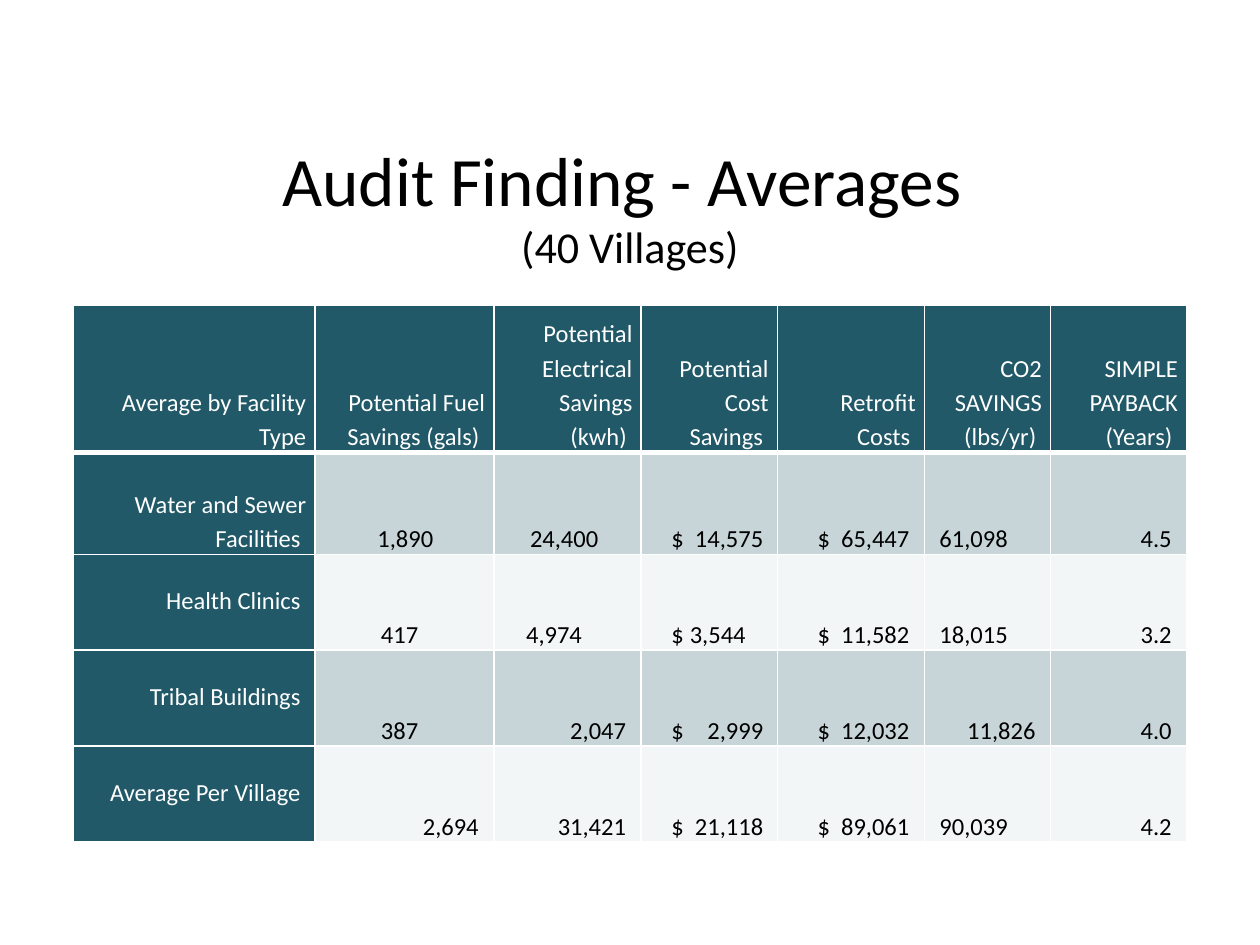
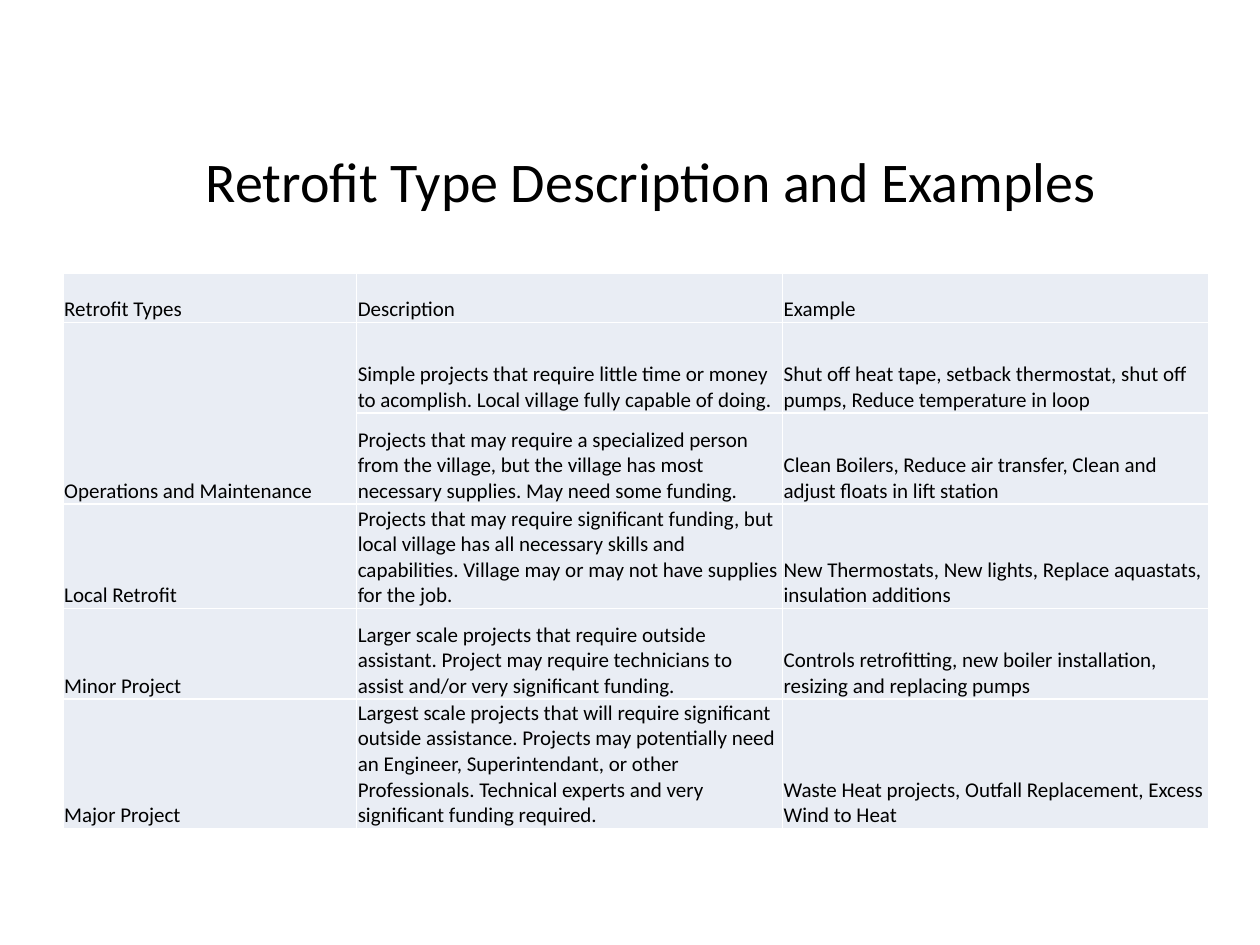
from dataclasses import dataclass

from lxml.etree import SubElement
from pptx import Presentation
from pptx.dml.color import RGBColor
from pptx.enum.text import MSO_ANCHOR as Anchor, MSO_AUTO_SIZE as AutoSize, PP_ALIGN as Align
from pptx.oxml.ns import qn
from pptx.util import Inches, Pt


@dataclass(frozen=True)
class Theme:
    font: str = "Calibri"
    black: str = "000000"
    white: str = "FFFFFF"
    teal: str = "215968"
    pale: str = "E9EDF4"
    title: float = 39.6
    subtitle: float = 25.2
    long_title: float = 32
    audit: float = 14
    retrofit: float = 12


THEME = Theme()


@dataclass(frozen=True)
class Box:
    left: float
    top: float
    width: float
    height: float

    def lengths(self) -> list:
        return [Inches(v) for v in (self.left, self.top, self.width, self.height)]


@dataclass(frozen=True)
class Entry:
    """Text of a table cell and its inner margins in inches."""
    text: str
    left: float = 0.07
    right: float = 0.07
    top: float = 0
    bottom: float = 0
    tab: float = 0


@dataclass(frozen=True)
class CellStyle:
    fill: str
    color: str
    size: float
    align: Align = Align.LEFT
    spacing: float = 1.0
    opacity: int = 100
    bottom_line: float = 1


# Text
def write(frame, text: str, *, size: float, color: str = THEME.black,
          align: Align = Align.LEFT, spacing: float = 1.0, tab: float = 0) -> None:
    """Fill a text frame, one paragraph for each line of text."""
    frame.word_wrap = True
    for index, line in enumerate(text.split("\n")):
        paragraph = frame.paragraphs[0] if index == 0 else frame.add_paragraph()
        paragraph.alignment = align
        paragraph.line_spacing = spacing
        if tab:
            stops = SubElement(paragraph._p.get_or_add_pPr(), qn("a:tabLst"))
            SubElement(stops, qn("a:tab"), pos=str(Inches(tab)), algn="r")
        add_run(paragraph, line, size, color)


def add_run(paragraph, text: str, size: float, color: str) -> None:
    run = paragraph.add_run()
    run.text = text
    run.font.name = THEME.font
    run.font.size = Pt(size)
    run.font.color.rgb = RGBColor.from_string(color)


def add_titled_slide(deck, title: str, box: Box, size: float, subtitle: str = ""):
    slide = deck.slides.add_slide(deck.slide_layouts[5])
    heading = slide.shapes.title
    heading.left, heading.top, heading.width, heading.height = box.lengths()
    frame = heading.text_frame
    frame.auto_size = AutoSize.NONE
    frame.vertical_anchor = Anchor.MIDDLE
    write(frame, title, size=size, align=Align.CENTER)
    if subtitle:
        paragraph = frame.paragraphs[0]
        paragraph.add_line_break()
        add_run(paragraph, subtitle, THEME.subtitle, THEME.black)
    return slide


# Tables
def add_grid(slide, box: Box, columns: list[float], rows: list[float]):
    grid = slide.shapes.add_table(len(rows), len(columns), *box.lengths()).table
    grid.first_row = grid.horz_banding = False
    for column, width in zip(grid.columns, columns):
        column.width = Inches(width)
    for row, height in zip(grid.rows, rows):
        row.height = Inches(height)
    return grid


def style_cell(cell, style: CellStyle) -> None:
    """Draw white borders, then the fill, which may be see-through."""
    properties = cell._tc.get_or_add_tcPr()
    for side in ("lnL", "lnR", "lnT", "lnB"):
        width = style.bottom_line if side == "lnB" else 1
        line = SubElement(properties, qn(f"a:{side}"), w=str(Pt(width)))
        paint = SubElement(line, qn("a:solidFill"))
        SubElement(paint, qn("a:srgbClr"), val=THEME.white)
    cell.fill.solid()
    cell.fill.fore_color.rgb = RGBColor.from_string(style.fill)
    if style.opacity < 100:
        tint = properties.find(f"{qn('a:solidFill')}/{qn('a:srgbClr')}")
        SubElement(tint, qn("a:alpha"), val=str(style.opacity * 1000))


def fill_cell(cell, entry: Entry, style: CellStyle) -> None:
    style_cell(cell, style)
    cell.vertical_anchor = Anchor.BOTTOM
    cell.margin_left, cell.margin_right = Inches(entry.left), Inches(entry.right)
    cell.margin_top, cell.margin_bottom = Inches(entry.top), Inches(entry.bottom)
    write(cell.text_frame, entry.text, size=style.size, color=style.color,
          align=Align.LEFT if entry.tab else style.align,
          spacing=style.spacing, tab=entry.tab)


# Audit averages
def number(text: str, right: float = 0.12) -> Entry:
    return Entry(text, right=right)


def savings(amount: str, tab: float = 0.73) -> Entry:
    return Entry(f"$\t{amount}", left=0.24, tab=tab)


def costs(amount: str) -> Entry:
    return Entry(f"$\t{amount}", left=0.32, tab=0.73)


def raised(label: str) -> Entry:
    return Entry(label, bottom=0.27)


AUDIT_HEADINGS = [
    "Average by Facility Type", "Potential Fuel Savings (gals) ",
    "Potential Electrical Savings (kwh) ", "Potential Cost Savings ",
    "Retrofit Costs ", "CO2 SAVINGS (lbs/yr) ", "SIMPLE PAYBACK\n(Years) ",
]
AUDIT_ROWS = [
    [Entry("Water and Sewer Facilities "), number("1,890", 0.48), number("24,400", 0.34),
     savings("14,575"), costs("65,447"), number("61,098", 0.34), number("4.5")],
    [raised("Health Clinics "), number("417", 0.6), number("4,974", 0.47),
     savings("3,544", 0.59), costs("11,582"), number("18,015", 0.34), number("3.2")],
    [raised("Tribal Buildings "), number("387", 0.6), number("2,047"),
     savings("2,999"), costs("12,032"), number("11,826"), number("4.0")],
    [raised("Average Per Village "), number("2,694"), number("31,421"),
     savings("21,118"), costs("89,061"), number("90,039", 0.34), number("4.2")],
]


def audit_style(row: int, column: int) -> CellStyle:
    if row == 0 or column == 0:
        return CellStyle(THEME.teal, THEME.white, THEME.audit, Align.RIGHT, 1.15,
                         bottom_line=3 if row == 0 else 1)
    return CellStyle(THEME.teal, THEME.black, THEME.audit, Align.RIGHT, 1.15,
                     opacity=25 if row % 2 else 5)


def build_audit_slide(deck) -> None:
    slide = add_titled_slide(deck, "Audit Finding - Averages ", Box(0.5, 1, 9, 1.25),
                             THEME.title, "(40 Villages)")
    averages = add_grid(slide, Box(0.58, 2.42, 8.83, 4.25),
                        [1.92, 1.42, 1.17, 1.08, 1.17, 1, 1.08],
                        [1.17, 0.81] + [0.76] * 3)
    headings = [Entry(heading) for heading in AUDIT_HEADINGS]
    for r, entries in enumerate([headings] + AUDIT_ROWS):
        for c, entry in enumerate(entries):
            fill_cell(averages.cell(r, c), entry, audit_style(r, c))


# Retrofit types; an empty type continues the one above
RETROFITS = [
    ("Retrofit Types", "Description", "Example"),
    ("Operations and Maintenance",
     "Simple projects that require little time or money to acomplish. "
     "Local village fully capable of doing.",
     "Shut off heat tape, setback thermostat, shut off pumps, Reduce temperature in loop"),
    ("",
     "Projects that may require a specialized person from the village, but the village "
     "has most necessary supplies. May need some funding.",
     "Clean Boilers, Reduce air transfer, Clean and adjust floats in lift station"),
    ("Local Retrofit",
     "Projects that may require significant funding, but local village has all necessary "
     "skills and capabilities. Village may or may not have supplies for the job.",
     "New Thermostats, New lights, Replace aquastats, insulation additions"),
    ("Minor Project",
     "Larger scale projects that require outside assistant. Project may require "
     "technicians to assist and/or very significant funding.",
     "Controls retrofitting, new boiler installation, resizing and replacing pumps"),
    ("Major Project",
     "Largest scale projects that will require significant outside assistance. Projects "
     "may potentially need an Engineer, Superintendant, or other Professionals. "
     "Technical experts and very significant funding required.",
     "Waste Heat projects, Outfall Replacement, Excess Wind to Heat"),
]


def build_retrofit_slide(deck) -> None:
    slide = add_titled_slide(deck, "Retrofit Type Description and Examples",
                             Box(0.67, 0.83, 9, 1.2), THEME.long_title)
    retrofits = add_grid(slide, Box(0.5, 2.17, 9.08, 4.4), [2.33, 3.38, 3.38],
                         [0.39, 0.72, 0.72, 0.83, 0.72, 1.01])
    style = CellStyle(THEME.pale, THEME.black, THEME.retrofit)
    for r, texts in enumerate(RETROFITS):
        for c, text in enumerate(texts):
            cell = retrofits.cell(r, c)
            if text:
                fill_cell(cell, Entry(text, left=0.01, right=0.01, top=0.01), style)
            else:
                style_cell(cell, style)
                retrofits.cell(r - 1, c).merge(cell)


def main() -> None:
    deck = Presentation()
    deck.slide_width, deck.slide_height = Inches(10), Inches(7.5)
    build_audit_slide(deck)
    build_retrofit_slide(deck)
    deck.save("out.pptx")


if __name__ == "__main__":
    main()
